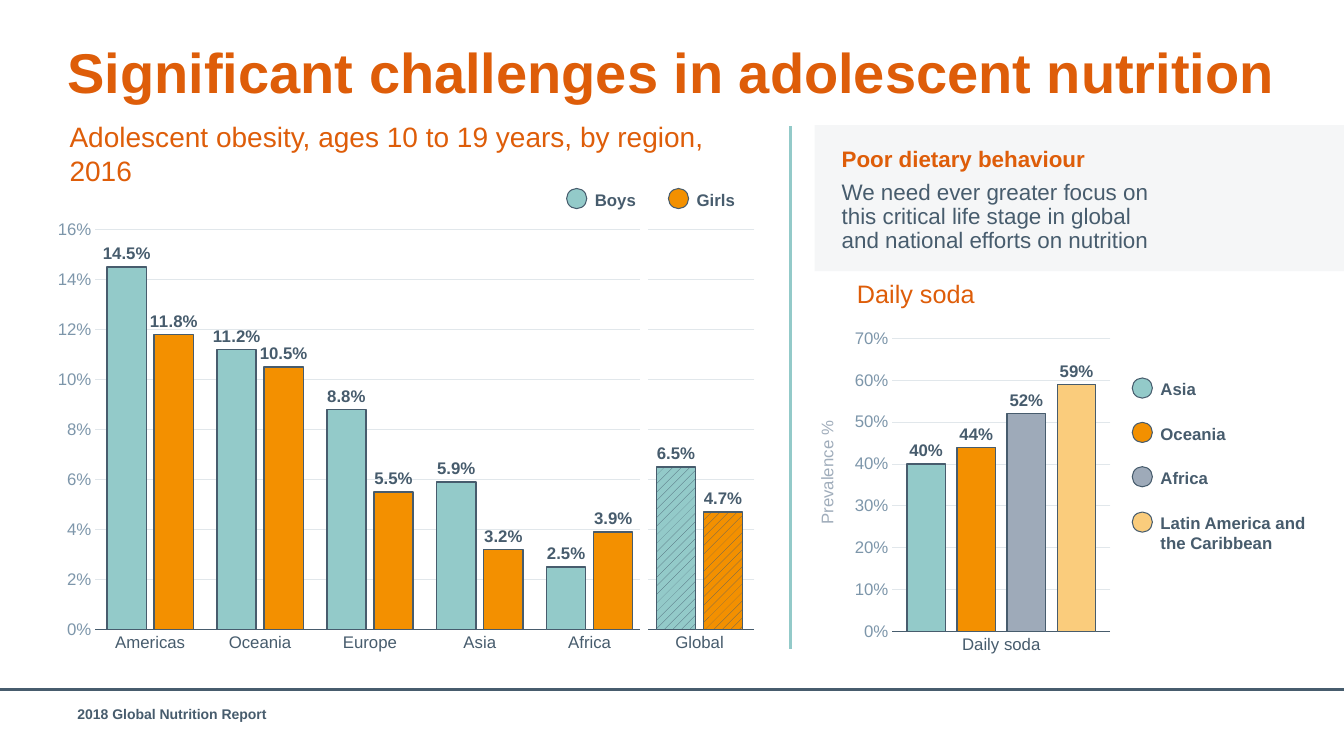
from lxml.etree import SubElement
from pptx import Presentation
from pptx.chart.data import CategoryChartData
from pptx.dml.color import RGBColor
from pptx.enum.chart import XL_CHART_TYPE, XL_LABEL_POSITION, XL_TICK_MARK
from pptx.enum.dml import MSO_PATTERN
from pptx.enum.shapes import MSO_CONNECTOR, MSO_SHAPE
from pptx.enum.text import MSO_ANCHOR, PP_ALIGN
from pptx.oxml import parse_xml
from pptx.oxml.ns import nsdecls, qn
from pptx.util import Inches, Pt

SLATE = RGBColor(0x47, 0x5C, 0x6D)
ORANGE = RGBColor(0xDE, 0x5D, 0x09)
TEAL = RGBColor(0x93, 0xCA, 0xC9)
AMBER = RGBColor(0xF3, 0x90, 0x00)
GREY = RGBColor(0x9E, 0xAA, 0xB9)
SAND = RGBColor(0xFA, 0xCC, 0x7C)
STEEL = RGBColor(0x7D, 0x96, 0xAA)
MIST = RGBColor(0xA0, 0xAD, 0xBB)
GRID = RGBColor(0xE1, 0xE7, 0xEB)
PANEL = RGBColor(0xEC, 0xEF, 0xF1)
WHITE = RGBColor(0xFF, 0xFF, 0xFF)

BOLD = {"size": 12, "bold": True, "color": SLATE}
HEAD = {"bold": False, "color": ORANGE}
FLAT = (0, 0, 0, 0)
INSET = (0.08, 0.04, 0.04, 0.04)
USUAL = (0.1, 0.05, 0.1, 0.05)


def set_font(font, size, color, bold=False):
    values = {"name": "Arial", "size": Pt(size), "bold": bold}
    for key, value in values.items():
        setattr(font, key, value)
    font.color.rgb = color


def set_frame(frame, insets, anchor=MSO_ANCHOR.TOP):
    sides = ("left", "top", "right", "bottom")
    values = {f"margin_{side}": Inches(gap) for side, gap in zip(sides, insets)}
    values.update(word_wrap=True, vertical_anchor=anchor)
    for key, value in values.items():
        setattr(frame, key, value)


def write(para, text, style, **layout):
    run = para.add_run()
    run.text = text
    set_font(run.font, **style)
    for key, value in layout.items():
        setattr(para, key, value)


def add_text(slide, box, text, style, insets=FLAT, anchor=MSO_ANCHOR.TOP, **layout):
    shape = slide.shapes.add_textbox(*map(Inches, box))
    set_frame(shape.text_frame, insets, anchor)
    write(shape.text_frame.paragraphs[0], text, style, **layout)
    return shape


def add_line(slide, start, end, color, width):
    ends = map(Inches, start + end)
    line = slide.shapes.add_connector(MSO_CONNECTOR.STRAIGHT, *ends)
    line.line.color.rgb = color
    line.line.width = Pt(width)
    SubElement(line._element.spPr, qn("a:effectLst"))


def add_shape(slide, kind, box, color):
    shape = slide.shapes.add_shape(kind, *map(Inches, box))
    shape.shadow.inherit = False
    shape.fill.solid()
    shape.fill.fore_color.rgb = color
    shape.line.fill.background()
    return shape


def add_key(slide, left, top, text, color, width=1.0, height=0.2):
    dot = add_shape(slide, MSO_SHAPE.OVAL, (left, top, 0.2, 0.2), color)
    dot.line.color.rgb = SLATE
    dot.line.width = Pt(0.75)
    add_text(slide, (left + 0.28, top + 0.01, width, height), text, BOLD,
             anchor=MSO_ANCHOR.MIDDLE)


def set_plot(chart, area):
    parts = "".join(f'<c:{tag} val="{value}"/>' for tag, value in zip("xywh", area))
    layout = parse_xml(
        f'<c:layout {nsdecls("c")}><c:manualLayout><c:layoutTarget val="inner"/>'
        f'<c:xMode val="edge"/><c:yMode val="edge"/>{parts}</c:manualLayout></c:layout>')
    plot = chart._chartSpace.chart.plotArea
    for old in plot.findall(qn("c:layout")):
        plot.remove(old)
    plot.insert(0, layout)


def set_axes(chart, top, step):
    cats, vals = chart.category_axis, chart.value_axis
    for axis, color in ((cats, SLATE), (vals, STEEL)):
        axis.major_tick_mark = axis.minor_tick_mark = XL_TICK_MARK.NONE
        set_font(axis.tick_labels.font, 12, color)
    cats.has_major_gridlines = False
    cats.format.line.color.rgb = SLATE
    cats.format.line.width = Pt(0.75)
    limits = {"minimum_scale": 0, "maximum_scale": top, "major_unit": step}
    for key, value in limits.items():
        setattr(vals, key, value)
    vals.format.line.fill.background()
    vals.major_gridlines.format.line.color.rgb = GRID
    vals.major_gridlines.format.line.width = Pt(0.75)
    vals.tick_labels.number_format = "0%"
    vals.tick_labels.number_format_is_linked = False


def add_bars(slide, box, cats, rows, mask, gap, overlap, top, step, area):
    data = CategoryChartData()
    data.categories = cats
    for num, (values, color) in enumerate(rows, 1):
        data.add_series(f"Series {num}", values)
    frame = slide.shapes.add_chart(
        XL_CHART_TYPE.COLUMN_CLUSTERED, *map(Inches, box), data)
    chart = frame.chart
    chart.has_title = chart.has_legend = False
    set_font(chart.font, 10, SLATE)
    set_axes(chart, top, step)
    set_plot(chart, area)
    plot = chart.plots[0]
    plot.vary_by_categories = False
    plot.gap_width, plot.overlap = gap, overlap
    for series, (values, color) in zip(plot.series, rows):
        series.format.fill.solid()
        series.format.fill.fore_color.rgb = color
        series.format.line.color.rgb = SLATE
        series.format.line.width = Pt(1)
        labels = series.data_labels
        looks = {"show_value": True, "number_format": mask,
                 "number_format_is_linked": False,
                 "position": XL_LABEL_POSITION.OUTSIDE_END}
        for key, value in looks.items():
            setattr(labels, key, value)
        set_font(labels.font, **BOLD)
    return plot


def hatch(series, index, color):
    look = series.points[index].format
    look.fill.patterned()
    look.fill.pattern = MSO_PATTERN.PERCENT_20
    look.fill.fore_color.rgb = SLATE
    look.fill.back_color.rgb = color
    look.line.color.rgb = SLATE
    look.line.width = Pt(1)


def main():
    deck = Presentation()
    deck.slide_width, deck.slide_height = Inches(13.33), Inches(7.5)
    slide = deck.slides.add_slide(deck.slide_layouts[5])

    # Title, footer and dividers
    add_line(slide, (0, 6.84), (13.33, 6.84), SLATE, 2)
    title = slide.shapes.title
    places = zip(("left", "top", "width", "height"), (0.67, 0.45, 12, 0.65))
    for key, value in places:
        setattr(title, key, Inches(value))
    set_frame(title.text_frame, FLAT)
    write(title.text_frame.paragraphs[0],
          "Significant challenges in adolescent nutrition",
          {"size": 40, "bold": True, "color": ORANGE},
          alignment=PP_ALIGN.LEFT, line_spacing=0.9)
    add_line(slide, (7.84, 1.25), (7.84, 6.44), TEAL, 1.5)
    add_text(slide, (0.67, 6.95, 9.6, 0.4), "2018 Global Nutrition Report",
             {**BOLD, "size": 10}, USUAL)

    # Obesity chart, with Global set apart
    add_text(slide, (0.61, 1.15, 6.99, 0.75),
             "Adolescent obesity, ages 10 to 19 years, by region, 2016",
             {**HEAD, "size": 20}, INSET)
    cats = ("Americas", "Oceania", "Europe", "Asia", "Africa", "Global")
    rows = (((0.145, 0.112, 0.088, 0.059, 0.025, 0.065), TEAL),
            ((0.118, 0.105, 0.055, 0.032, 0.039, 0.047), AMBER))
    plot = add_bars(slide, (0.42, 2.1, 7.2, 4.45), cats, rows, "0.0%",
                    60, -20, 0.16, 0.02, (0.073, 0.04, 0.908, 0.892))
    for series, (values, color) in zip(plot.series, rows):
        hatch(series, len(cats) - 1, color)
    add_line(slide, (6.39, 2.13), (6.39, 6.32), WHITE, 6)
    add_key(slide, 5.62, 1.87, "Boys", TEAL, 0.57)
    add_key(slide, 6.63, 1.87, "Girls", AMBER, 0.62)

    # Message panel
    panel = add_shape(slide, MSO_SHAPE.RECTANGLE, (8.08, 1.24, 5.25, 1.45), PANEL)
    tint = panel._element.spPr.find(qn("a:solidFill"))[0]
    SubElement(tint, qn("a:alpha"), val="50000")
    spacing = {"line_spacing": 0.9, "space_before": Pt(6)}
    note = add_text(slide, (8.25, 1.42, 3.3, 1.15), "Poor dietary behaviour",
                    {"size": 16, "bold": True, "color": ORANGE}, USUAL, **spacing)
    write(note.text_frame.add_paragraph(),
          "We need ever greater focus on this critical life stage in global "
          "and national efforts on nutrition",
          {"size": 16, "color": SLATE}, **spacing)

    # Soda chart
    add_text(slide, (8.42, 2.72, 2.14, 0.38), "Daily soda",
             {**HEAD, "size": 18}, INSET)
    rows = (((0.4,), TEAL), ((0.44,), AMBER), ((0.52,), GREY), ((0.59,), SAND))
    add_bars(slide, (8.43, 3.21, 2.63, 3.35), ("Daily soda",), rows, "0%",
             75, -30, 0.7, 0.1, (0.16, 0.044, 0.822, 0.869))
    side = add_text(slide, (6.68, 4.59, 3.04, 0.2), "Prevalence %",
                    {"size": 12, "color": MIST}, anchor=MSO_ANCHOR.MIDDLE,
                    alignment=PP_ALIGN.CENTER)
    side.rotation = 270
    names = ("Asia", "Oceania", "Africa")
    for num, (name, (values, color)) in enumerate(zip(names, rows)):
        add_key(slide, 11.23, 3.75 + 0.44 * num, name, color)
    add_key(slide, 11.23, 5.08, "Latin America and the Caribbean", SAND, 1.48, 0.4)

    deck.save("out.pptx")


if __name__ == "__main__":
    main()
